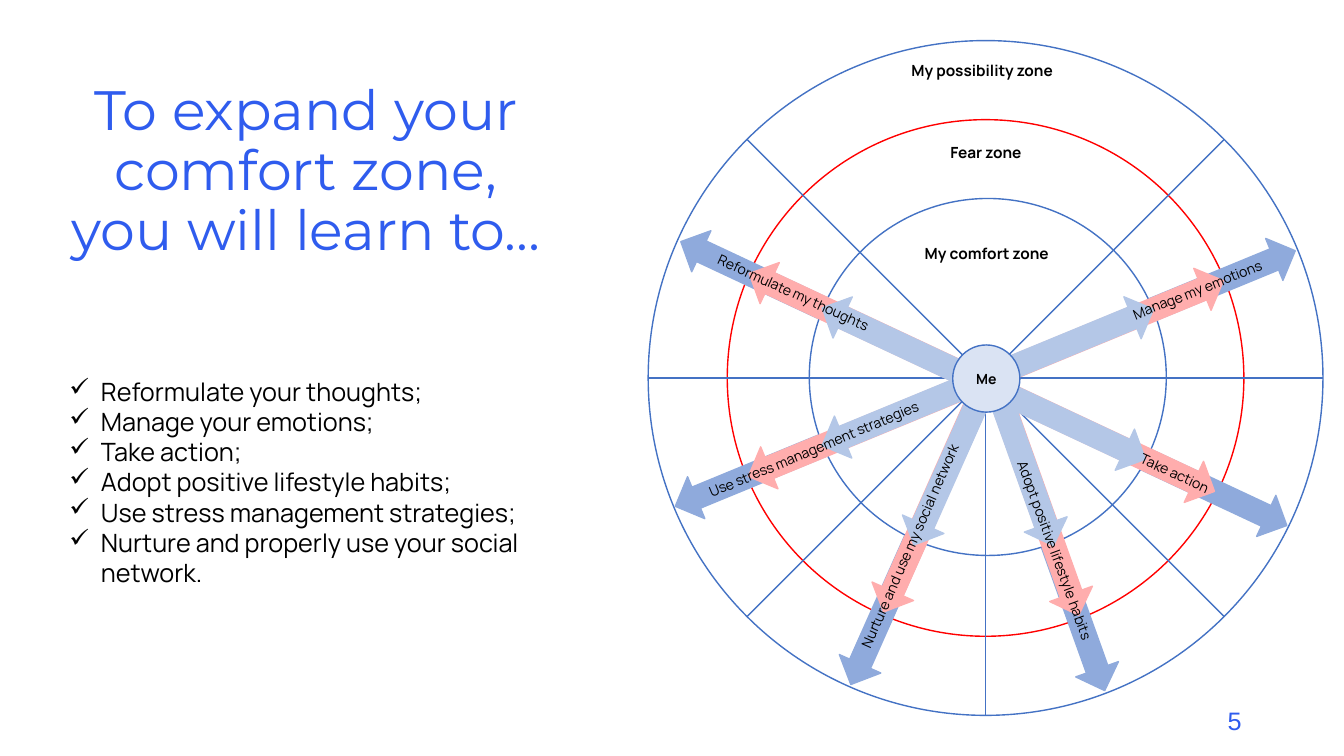
"""Builds a slide about widening the comfort zone, with a wheel of zones and arrows."""
from math import cos, radians, sin

from lxml.etree import SubElement
from pptx import Presentation
from pptx.dml.color import RGBColor
from pptx.enum.shapes import MSO_CONNECTOR as Connector, MSO_SHAPE as Shape
from pptx.enum.text import MSO_ANCHOR as Anchor, PP_ALIGN as Align
from pptx.oxml.ns import qn
from pptx.util import Pt

BLACK = RGBColor(0x00, 0x00, 0x00)
WHITE = RGBColor(0xFF, 0xFF, 0xFF)
ROYAL = RGBColor(0x2F, 0x5C, 0xEE)
BLUE = RGBColor(0x44, 0x72, 0xC4)
RED = RGBColor(0xFF, 0x00, 0x00)
PALE = RGBColor(0xDA, 0xE3, 0xF3)
POSSIBILITY = RGBColor(0x8F, 0xAA, 0xDC)
FEAR = RGBColor(0xFF, 0xAD, 0xAD)
COMFORT = RGBColor(0xB4, 0xC7, 0xE7)

CENTER_X, CENTER_Y = 704, 270
OUTER, HUB = 241, 24
ARROW_HEIGHT, CAPTION_HEIGHT = 32.4, 20

HABITS = [
    "Reformulate your thoughts;",
    "Manage your emotions;",
    "Take action;",
    "Adopt positive lifestyle habits;",
    "Use stress management strategies;",
    "Nurture and properly use your social network.",
]
SPOKES = [(45, -OUTER), (135, -OUTER), (90, HUB), (0, -OUTER)]
ZONES = [
    ("My possibility zone", 701.6, 50.4, 133),
    ("My comfort zone", 704.9, 180.7, 114),
    ("Fear zone", 704.2, 108.7, 84),
]
ARROWS = {
    POSSIBILITY: [(744.1, 367.6, 267, 250.3), (663.1, 364.7, 272, 294),
                  (703.8, 270.4, 479, 337.6), (702.7, 274, 478, 25.1)],
    FEAR: [(701.3, 273.2, 367, 25.1), (704.2, 270.4, 367, 337.6),
           (671.4, 346.7, 198, 294), (737.3, 346.7, 197, 250.3)],
    COMFORT: [(702.7, 274, 255, 25.1), (705.6, 269.6, 256, 337.6),
              (680.8, 326.5, 137.5, 294), (729, 324.4, 139, 250.3)],
}
CAPTIONS = [
    ("Reformulate my thoughts", 566.6, 209.5, 181.4, 24.6, Align.CENTER),
    ("Take action", 853.2, 344.9, 98, 24.7, Align.LEFT),
    ("Use stress management strategies", 581.4, 321.1, 216.7, 337.2, Align.CENTER),
    ("Manage my emotions", 855.4, 207.4, 145.4, 338.5, Align.CENTER),
    ("Nurture and use my social network", 650.2, 390.2, 210.2, 293.8, Align.CENTER),
    ("Adopt positive lifestyle habits", 753.1, 393.1, 214.6, 69.8, Align.CENTER),
]


class Painter:
    """Holds the text style and the current slide, and draws each kind of element."""

    def __init__(self, page, font):
        self.page = page
        self.font = font

    def style(self, para, size, color=BLACK, bold=False, align=Align.CENTER, font=None):
        para.alignment = align
        para.font.name = font or self.font
        para.font.size = Pt(size)
        para.font.bold = bold
        para.font.color.rgb = color

    def title(self, text, left, top, width, height):
        box = self.page.shapes.title
        box.left, box.top, box.width, box.height = map(Pt, (left, top, width, height))
        frame = box.text_frame
        frame.text = text
        frame.word_wrap = True
        frame.vertical_anchor = Anchor.MIDDLE
        para = frame.paragraphs[0]
        para.line_spacing = 0.9
        self.style(para, 39.6, ROYAL, font="Montserrat")

    def text(self, text, left, top, width, height, size, wrap=True, turn=0, **look):
        box = self.page.shapes.add_textbox(Pt(left), Pt(top), Pt(width), Pt(height))
        box.rotation = turn
        box.text_frame.word_wrap = wrap
        box.text_frame.text = text
        self.style(box.text_frame.paragraphs[0], size, **look)

    def centered_text(self, text, x, y, width, size, **look):
        self.text(text, x - width / 2, y - CAPTION_HEIGHT / 2, width, CAPTION_HEIGHT, size, **look)

    def checklist(self, items, left, top, width, height, indent):
        box = self.page.shapes.add_textbox(Pt(left), Pt(top), Pt(width), Pt(height))
        frame = box.text_frame
        frame.word_wrap = True
        frame.text = "\n".join(items)
        for para in frame.paragraphs:
            properties = para._p.get_or_add_pPr()
            properties.set("marL", str(Pt(indent)))
            properties.set("indent", str(-Pt(indent)))
            SubElement(properties, qn("a:buChar")).set("char", "✓")
            self.style(para, 18, align=Align.LEFT)

    def shape(self, kind, x, y, width, height, fill, line, turn=0):
        shape = self.page.shapes.add_shape(
            kind, Pt(x - width / 2), Pt(y - height / 2), Pt(width), Pt(height))
        shape.rotation = turn
        shape.shadow.inherit = False
        shape.fill.solid()
        shape.fill.fore_color.rgb = fill
        shape.line.color.rgb = line
        shape.line.width = Pt(1)
        return shape

    def circle(self, x, y, radius, fill=WHITE, line=BLUE):
        return self.shape(Shape.OVAL, x, y, 2 * radius, 2 * radius, fill, line)

    def hub(self, text, x, y, radius):
        frame = self.circle(x, y, radius, PALE).text_frame
        frame.word_wrap = False
        frame.vertical_anchor = Anchor.MIDDLE
        frame.text = text
        self.style(frame.paragraphs[0], 10, bold=True)

    def arrows(self, color):
        for x, y, length, turn in ARROWS[color]:
            self.shape(Shape.LEFT_RIGHT_ARROW, x, y, length, ARROW_HEIGHT, color, color, turn)

    def spoke(self, angle, start, end):
        across, down = cos(radians(angle)), sin(radians(angle))
        line = self.page.shapes.add_connector(
            Connector.STRAIGHT,
            Pt(CENTER_X + start * across), Pt(CENTER_Y + start * down),
            Pt(CENTER_X + end * across), Pt(CENTER_Y + end * down))
        line.line.color.rgb = BLUE
        line.line.width = Pt(1)
        SubElement(line._element.spPr, qn("a:effectLst"))


def main():
    deck = Presentation()
    deck.slide_width, deck.slide_height = Pt(960), Pt(540)
    painter = Painter(deck.slides.add_slide(deck.slide_layouts[5]), "Manrope")

    painter.title("To expand your comfort zone, you will learn to…", 42, 71, 353, 104)
    painter.text("5", 678, 500.5, 216, 29, 18, color=ROYAL, align=Align.RIGHT, font="Arial")
    painter.checklist(HABITS, 42.5, 265, 397.5, 160, 22.5)

    painter.circle(CENTER_X, CENTER_Y, OUTER)
    painter.circle(CENTER_X, CENTER_Y, 184.5, line=RED)
    painter.arrows(POSSIBILITY)
    painter.circle(705.6, 269.3, 127.5)
    for angle, start in SPOKES:
        painter.spoke(angle, start, OUTER)
    for zone, x, y, width in ZONES:
        painter.centered_text(zone, x, y, width, 11, wrap=False, bold=True)
    painter.arrows(FEAR)
    painter.arrows(COMFORT)
    for caption, x, y, width, turn, align in CAPTIONS:
        painter.centered_text(caption, x, y, width, 10, turn=turn, align=align)
    painter.hub("Me", 704.5, 270.4, HUB)

    deck.save("out.pptx")


if __name__ == "__main__":
    main()
